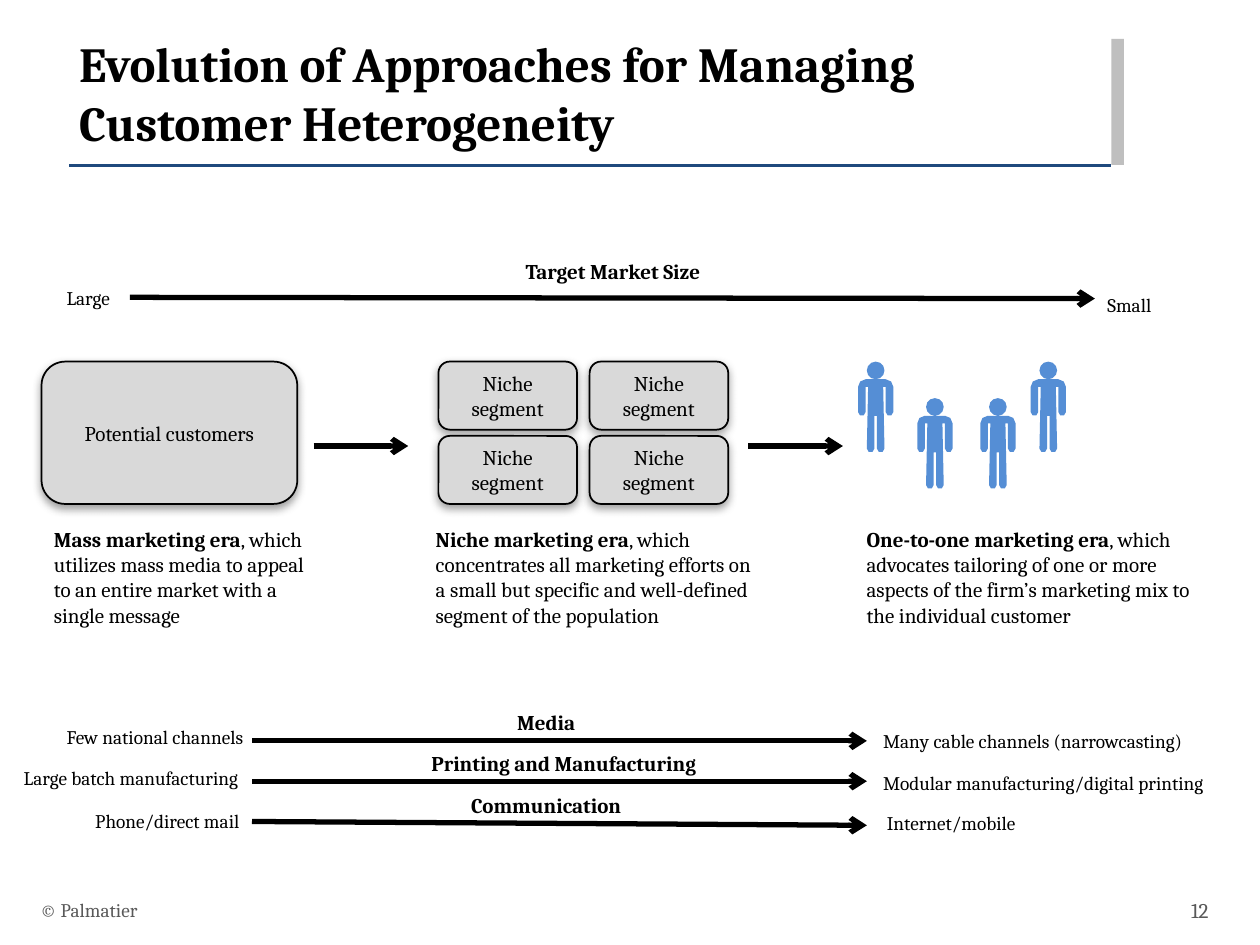
from math import cos, radians, sin

from lxml.etree import SubElement
from pptx import Presentation
from pptx.dml.color import RGBColor
from pptx.enum.shapes import MSO_CONNECTOR, MSO_SHAPE
from pptx.enum.text import MSO_ANCHOR, PP_ALIGN
from pptx.oxml.ns import qn
from pptx.util import Inches, Pt

FONT = "Cambria"
BLACK, GREY, FOOTER_GREY = "000000", "D9D9D9", "595959"
LEFT, CENTER, RIGHT = PP_ALIGN.LEFT, PP_ALIGN.CENTER, PP_ALIGN.RIGHT

TITLE = "Evolution of Approaches for Managing Customer Heterogeneity"
ERAS = [
    ("Mass marketing era", ", which utilizes mass media to appeal to an entire market "
     "with a single message", 0.33, 2.2),
    ("Niche marketing era", ", which concentrates all marketing efforts on a small but "
     "specific and well-defined segment of the population", 3.36, 2.76),
    ("One-to-one marketing era", ", which advocates tailoring of one or more aspects of "
     "the firm’s marketing mix to the individual customer", 6.78, 2.92),
]
HEADINGS = [
    ("Target Market Size", 3.78, 2, 2.17),
    ("Media", 3.5, 5.58, 1.67),
    ("Printing and Manufacturing", 3.08, 5.91, 2.79),
    ("Communication", 3.25, 6.24, 2.17),
]
END_LABELS = [
    ("Large", 0.43, 2.22, 0.67, LEFT),
    ("Small", 8.69, 2.28, 0.67, LEFT),
    ("Few national channels", 0.03, 5.71, 2, RIGHT),
    ("Large batch manufacturing", -0.14, 6.03, 2.13, RIGHT),
    ("Phone/direct mail", 0, 6.37, 2, RIGHT),
    ("Many cable channels (narrowcasting)", 6.91, 5.74, 2.92, LEFT),
    ("Modular manufacturing/digital printing", 6.91, 6.07, 3.08, LEFT),
    ("Internet/mobile", 6.94, 6.39, 1.67, LEFT),
]
ARROWS = [
    (1.03, 2.36, 8.69, 2.37),
    (2.49, 3.54, 3.24, 3.54),
    (5.94, 3.54, 6.69, 3.54),
    (2, 5.88, 6.88, 5.88),
    (2, 6.2, 6.88, 6.2),
    (2, 6.52, 6.88, 6.55),
]
MARKET_TOP = 2.87
NICHE_LEFT, NICHE_W, NICHE_H = 3.48, 1.1, 0.54
NICHE_STEP_X, NICHE_STEP_Y = 1.2, 0.59
CUSTOMERS = [(6.81, 2.87), (7.28, 3.16), (7.78, 3.16), (8.18, 2.87)]
CUSTOMER_W = 0.28

prs = Presentation()
prs.slide_width, prs.slide_height = Inches(10), Inches(7.5)
slide = prs.slides.add_slide(prs.slide_layouts[6])


def color(value):
    return RGBColor.from_string(value)


def style(run, size, bold=False, ink=BLACK):
    run.font.name, run.font.size, run.font.bold = FONT, Pt(size), bold
    run.font.color.rgb = color(ink)


def add_text(text, x, y, w, h, size, align=LEFT, bold=False, ink=BLACK,
             anchor=MSO_ANCHOR.TOP):
    frame = slide.shapes.add_textbox(Inches(x), Inches(y), Inches(w), Inches(h)).text_frame
    frame.word_wrap, frame.vertical_anchor = True, anchor
    frame.text = text
    paragraph = frame.paragraphs[0]
    paragraph.alignment = align
    style(paragraph.runs[0], size, bold, ink)
    return paragraph


def add_line(x1, y1, x2, y2, ink, width, arrow=False):
    line = slide.shapes.add_connector(
        MSO_CONNECTOR.STRAIGHT, Inches(x1), Inches(y1), Inches(x2), Inches(y2))
    line.line.color.rgb, line.line.width = color(ink), Pt(width)
    if arrow:
        SubElement(line.line._get_or_add_ln(), qn("a:tailEnd"), type="arrow")
    SubElement(line._element.spPr, qn("a:effectLst"))


def fill_plain(shape, ink):
    shape.shadow.inherit = False
    shape.fill.solid()
    shape.fill.fore_color.rgb = color(ink)
    shape.line.fill.background()


def add_market(text, x, y, w, h):
    market = slide.shapes.add_shape(
        MSO_SHAPE.ROUNDED_RECTANGLE, Inches(x), Inches(y), Inches(w), Inches(h))
    fill_plain(market, GREY)
    market.line.color.rgb, market.line.width = color(BLACK), Pt(1)
    shadow = SubElement(market._element.spPr.find(qn("a:effectLst")), qn("a:outerShdw"),
                        blurRad=str(Pt(5)), dist=str(Pt(2)), dir="5400000", rotWithShape="0")
    tint = SubElement(shadow, qn("a:srgbClr"), val="808080")
    SubElement(tint, qn("a:alpha"), val="75000")
    frame = market.text_frame
    frame.margin_left = frame.margin_right = Inches(0.11)
    frame.margin_top = frame.margin_bottom = Inches(0.06)
    frame.vertical_anchor = MSO_ANCHOR.MIDDLE
    frame.word_wrap = True
    frame.text = text
    frame.paragraphs[0].alignment = CENTER
    style(frame.paragraphs[0].runs[0], 12)


def arc(cx, cy, r, start, end, steps=3):
    angles = [radians(start + (end - start) * i / steps) for i in range(steps + 1)]
    return [(cx + r * cos(a), cy + r * sin(a)) for a in angles]


HEAD = arc(CUSTOMER_W / 2, 0.07, 0.07, 0, 360, 12)[:-1]
HALF_BODY = (arc(0.06, 0.2, 0.06, 270, 180, 2) + arc(0.03, 0.4, 0.03, 180, 0)
             + [(0.06, 0.2), (0.08, 0.2)] + arc(0.1, 0.69, 0.03, 180, 0) + [(0.13, 0.43)])
BODY = HALF_BODY + [(CUSTOMER_W - x, y) for x, y in reversed(HALF_BODY)]


def add_customer(crowd, left, top):
    head, body = [[(Inches(left + x), Inches(top + y)) for x, y in part]
                  for part in (HEAD, BODY)]
    outline = crowd.shapes.build_freeform(*head[0])
    outline.add_line_segments(head[1:], close=True)
    outline.move_to(*body[0])
    outline.add_line_segments(body[1:], close=True)
    fill_plain(outline.convert_to_shape(), "558ED5")


accent_bar = slide.shapes.add_shape(
    MSO_SHAPE.RECTANGLE, Inches(8.82), Inches(0.31), Inches(0.1), Inches(1))
fill_plain(accent_bar, "BFBFBF")
add_line(0.55, 1.31, 8.82, 1.31, "1F497D", 1.75)
add_text(TITLE, 0.53, 0.22, 8.26, 0.88, 28, bold=True)

for era, description, x, w in ERAS:
    paragraph = add_text(era, x, 4.13, w, 1.11, 12, bold=True)
    detail = paragraph.add_run()
    detail.text = description
    style(detail, 12)

for heading, x, y, w in HEADINGS:
    add_text(heading, x, y, w, 0.3, 12, CENTER, True)
for label, x, y, w, align in END_LABELS:
    add_text(label, x, y, w, 0.29, 11, align)
for ends in ARROWS:
    add_line(*ends, BLACK, 3, arrow=True)

add_market("Potential customers", 0.33, MARKET_TOP, 2.03, 1.13)
for row in range(2):
    for column in range(2):
        add_market("Niche segment", NICHE_LEFT + column * NICHE_STEP_X,
                   MARKET_TOP + row * NICHE_STEP_Y, NICHE_W, NICHE_H)
crowd = slide.shapes.add_group_shape()
for left, top in CUSTOMERS:
    add_customer(crowd, left, top)

add_text("© Palmatier", 0.22, 7.02, 6.7, 0.4, 11, ink=FOOTER_GREY, anchor=MSO_ANCHOR.MIDDLE)
add_text("12", 9.08, 7.02, 0.61, 0.4, 12, RIGHT, ink=FOOTER_GREY, anchor=MSO_ANCHOR.MIDDLE)

prs.save("out.pptx")
